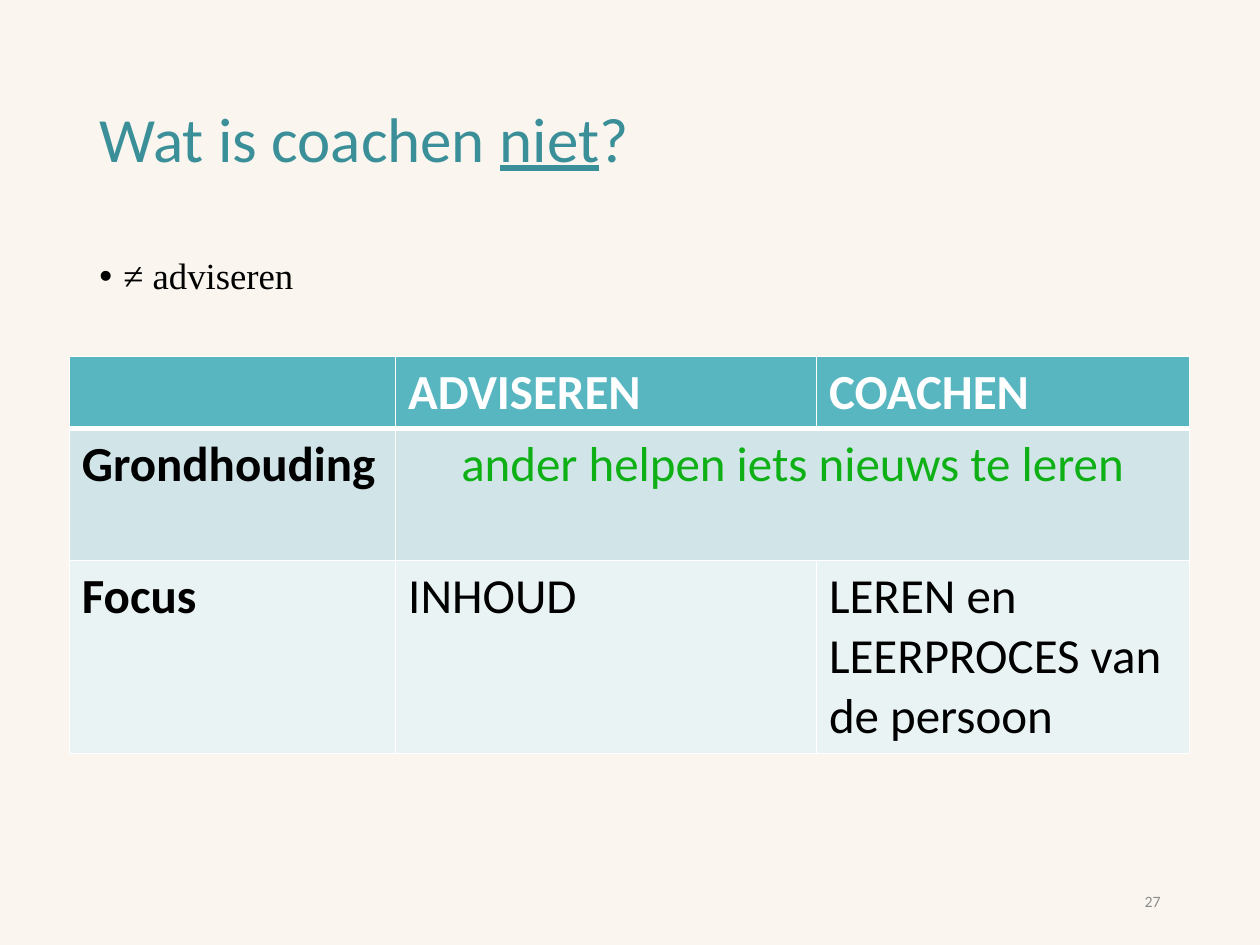
import lxml.etree
import pptx
import pptx.dml.color
import pptx.enum.text
import pptx.oxml.ns
import pptx.util

Inches, Pt = pptx.util.Inches, pptx.util.Pt
RGBColor = pptx.dml.color.RGBColor
ALIGN = pptx.enum.text.PP_ALIGN
ANCHOR = pptx.enum.text.MSO_ANCHOR
qn = pptx.oxml.ns.qn

CREAM = RGBColor(0xFA, 0xF6, 0xEF)
DARK_TEAL = RGBColor(0x3A, 0x8F, 0x98)
TEAL = RGBColor(0x58, 0xB6, 0xC0)
PALE_TEAL = RGBColor(0xD1, 0xE5, 0xE8)
PALEST_TEAL = RGBColor(0xEA, 0xF3, 0xF4)
GREEN = RGBColor(0x0E, 0xB0, 0x16)
GRAY = RGBColor(0x8C, 0x8C, 0x8C)
BLACK = RGBColor(0, 0, 0)
WHITE = RGBColor(0xFF, 0xFF, 0xFF)


def add_run(paragraph, text, color, **formats):
    run = paragraph.add_run()
    run.text = text
    run.font.color.rgb = color
    for name, value in ({"name": "Calibri"} | formats).items():
        setattr(run.font, name, value)


def set_borders(cell, bottom_width):
    """Draw white cell borders, 1 pt wide except at the bottom."""
    properties = cell._tc.get_or_add_tcPr()
    widths = {"a:lnL": 1, "a:lnR": 1, "a:lnT": 1, "a:lnB": bottom_width}
    for index, (tag, width) in enumerate(widths.items()):
        line = lxml.etree.Element(qn(tag), w=str(Pt(width)))
        fill = lxml.etree.SubElement(line, qn("a:solidFill"))
        lxml.etree.SubElement(fill, qn("a:srgbClr"), val=str(WHITE))
        properties.insert(index, line)


presentation = pptx.Presentation()
presentation.slide_width = Inches(10)
presentation.slide_height = Inches(7.5)
slide = presentation.slides.add_slide(presentation.slide_layouts[5])
slide.background.fill.solid()
slide.background.fill.fore_color.rgb = CREAM

# Title
title = slide.shapes.title
title.left, title.top = Inches(0.69), Inches(0.4)
title.width, title.height = Inches(8.62), Inches(1.45)
title.text_frame.vertical_anchor = ANCHOR.MIDDLE
paragraph = title.text_frame.paragraphs[0]
paragraph.alignment = ALIGN.LEFT
paragraph.line_spacing = 0.9
for text, underline in (("Wat is coachen ", False), ("niet", True), ("?", False)):
    add_run(paragraph, text, DARK_TEAL, size=Pt(36), underline=underline)

# Bullet
body = slide.shapes.add_textbox(Inches(0.69), Inches(2), Inches(8.62), Inches(0.6))
body.text_frame.word_wrap = True
paragraph = body.text_frame.paragraphs[0]
paragraph.line_spacing = 0.9
paragraph.space_before = Pt(7.5)
add_run(paragraph, "≠ adviseren", BLACK, name="Times New Roman", size=Pt(21))
properties = paragraph._p.get_or_add_pPr()
properties.set("marL", str(Inches(0.19)))
properties.set("indent", str(-Inches(0.19)))
lxml.etree.SubElement(properties, qn("a:buFont"), typeface="Arial")
lxml.etree.SubElement(properties, qn("a:buChar"), char="•")

# Comparison table
columns = (2.59, 3.34, 2.96)
rows = (0.57, 1.05, 1.53)
row_fills = (TEAL, PALE_TEAL, PALEST_TEAL)
texts = (
    ("", "ADVISEREN", "COACHEN"),
    ("Grondhouding", "ander helpen iets nieuws te leren", ""),
    ("Focus", "INHOUD", "LEREN en LEERPROCES van de persoon"),
)
table = slide.shapes.add_table(
    len(rows), len(columns), Inches(0.55), Inches(2.83),
    Inches(sum(columns)), Inches(sum(rows))).table
for column, width in zip(table.columns, columns):
    column.width = Inches(width)
for row, height in zip(table.rows, rows):
    row.height = Inches(height)
shared_cell = table.cell(1, 1)
shared_cell.merge(table.cell(1, 2))

for row_index, row_texts in enumerate(texts):
    is_header = row_index == 0
    for column_index, text in enumerate(row_texts):
        cell = table.cell(row_index, column_index)
        cell.fill.solid()
        cell.fill.fore_color.rgb = row_fills[row_index]
        set_borders(cell, 3 if is_header else 1)
        if text:
            is_shared = cell == shared_cell or cell.is_merge_origin
            color = WHITE if is_header else GREEN if is_shared else BLACK
            paragraph = cell.text_frame.paragraphs[0]
            paragraph.alignment = ALIGN.CENTER if is_shared else ALIGN.LEFT
            add_run(paragraph, text, color, size=Pt(28),
                    bold=is_header or column_index == 0)

# Slide number
number = slide.shapes.add_textbox(Inches(7.06), Inches(6.95), Inches(2.25), Inches(0.4))
number.text_frame.word_wrap = True
number.text_frame.vertical_anchor = ANCHOR.MIDDLE
paragraph = number.text_frame.paragraphs[0]
paragraph.alignment = ALIGN.RIGHT
add_run(paragraph, "27", GRAY, size=Pt(9))

presentation.save("out.pptx")
